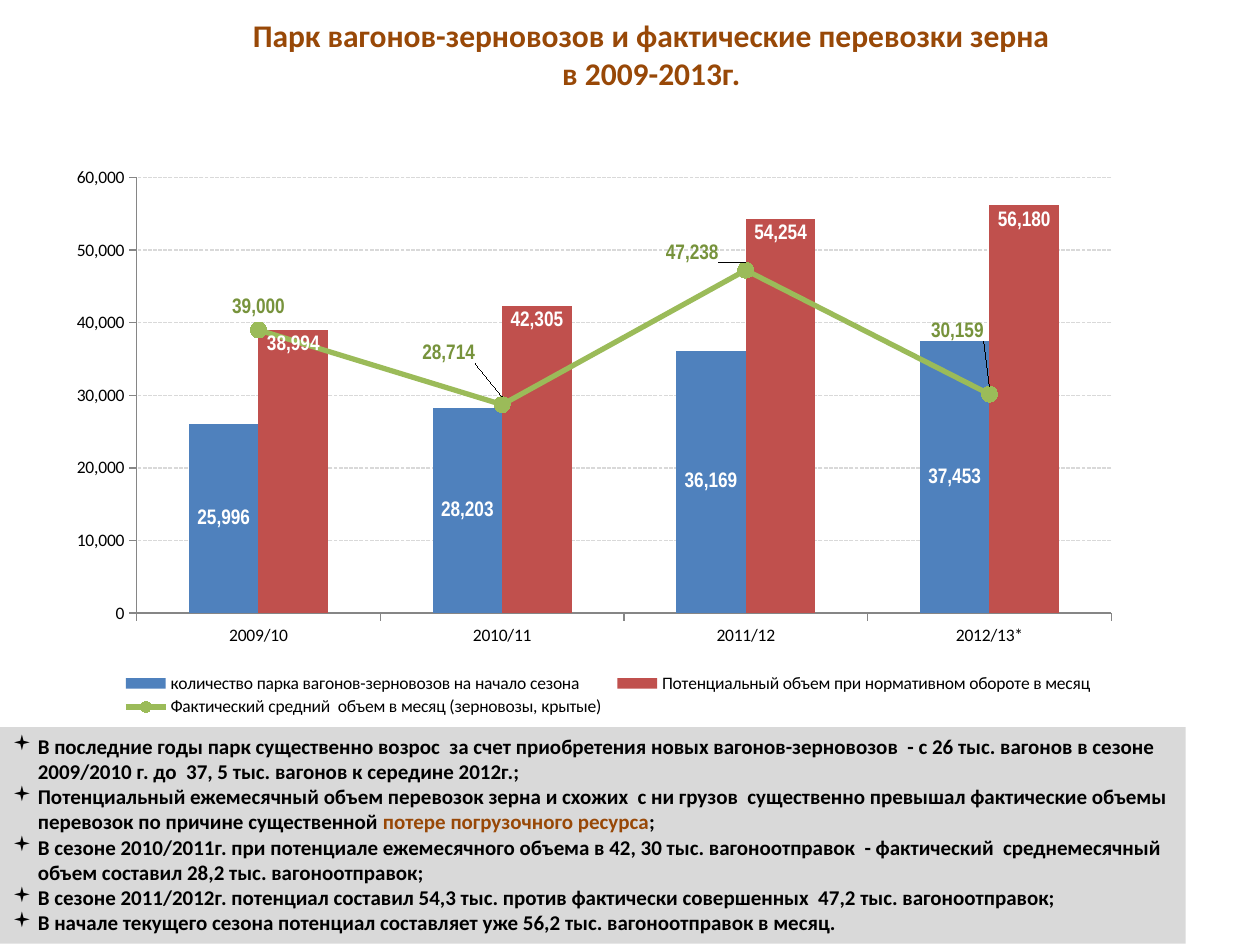
from lxml import etree
from pptx import Presentation
from pptx.chart.data import CategoryChartData
from pptx.dml.color import RGBColor
from pptx.enum.chart import XL_CHART_TYPE as ChartType
from pptx.enum.chart import XL_LABEL_POSITION as LabelPosition
from pptx.enum.chart import XL_LEGEND_POSITION as LegendPosition
from pptx.enum.chart import XL_MARKER_STYLE as MarkerStyle
from pptx.enum.chart import XL_TICK_MARK as TickMark
from pptx.enum.dml import MSO_LINE as LineDash
from pptx.enum.text import MSO_ANCHOR as Anchor
from pptx.enum.text import MSO_AUTO_SIZE as AutoSize
from pptx.enum.text import PP_ALIGN as Align
from pptx.oxml.ns import qn
from pptx.util import Inches, Pt

COLORS = {
    "brown": "984807", "black": "000000", "white": "FFFFFF", "panel": "D9D9D9",
    "grid": "D9D9D9", "axis": "868686", "fleet": "4F81BD",
    "potential": "C0504D", "actual": "9BBB59", "actual_label": "77933C",
}
FONT, LABEL_FONT = "Calibri", "Arial Narrow"
NUMBER_FORMAT = "#,##0"

TITLE = ["Парк вагонов-зерновозов и фактические перевозки зерна", "в 2009-2013г."]
# Each bullet is a list of (text, colour) runs
BULLETS = [
    [("В последние годы парк существенно возрос  за счет приобретения новых вагонов-зерновозов  "
      "- c 26 тыс. вагонов в сезоне 2009/2010 г. до  37, 5 тыс. вагонов к середине 2012г.;", "black")],
    [("Потенциальный ежемесячный объем перевозок зерна и схожих  с ни грузов  существенно "
      "превышал фактические объемы перевозок по причине существенной ", "black"),
     ("потере погрузочного ресурса", "brown"), (";", "black")],
    [("В сезоне 2010/2011г. при потенциале ежемесячного объема в 42, 30 тыс. вагоноотправок  "
      "- фактический  среднемесячный объем составил 28,2 тыс. вагоноотправок;", "black")],
    [("В сезоне 2011/2012г. потенциал составил 54,3 тыс. против фактически совершенных  "
      "47,2 тыс. вагоноотправок;", "black")],
    [("В начале текущего сезона потенциал составляет уже 56,2 тыс. вагоноотправок в месяц.", "black")],
]
SEASONS = ["2009/10", "2010/11", "2011/12", "2012/13*"]
# Name, values, series colour, label colour, label position
SERIES = [
    ("количество парка вагонов-зерновозов на начало сезона",
     [25996, 28203, 36169, 37453], "fleet", "white", LabelPosition.CENTER),
    ("Потенциальный объем при нормативном обороте в месяц",
     [38994, 42305, 54254, 56180], "potential", "white", LabelPosition.INSIDE_END),
    ("Фактический средний  объем в месяц (зерновозы, крытые)",
     [39000, 28714, 47238, 30159], "actual", "actual_label", LabelPosition.ABOVE),
]
# Shifts of the line labels, as fractions of the chart
LABEL_SHIFTS = {1: (-0.05, -0.05), 2: (-0.05, 0.01), 3: (-0.03, -0.07)}


def rgb(name):
    return RGBColor.from_string(COLORS[name])


def style_font(font, size, color, bold=False, name=FONT):
    font.size, font.bold, font.name = Pt(size), bold, name
    font.color.rgb = rgb(color)


def place(shape, box):
    shape.left, shape.top, shape.width, shape.height = (Inches(value) for value in box)


def prepare_text(shape):
    frame = shape.text_frame
    frame.word_wrap = True
    frame.auto_size = AutoSize.NONE
    frame.vertical_anchor = Anchor.TOP
    return frame


def add_paragraph(frame, index):
    paragraph = frame.add_paragraph() if index else frame.paragraphs[0]
    paragraph.space_before = Pt(0)
    return paragraph


def add_run(paragraph, text, size, color):
    run = paragraph.add_run()
    run.text = text
    style_font(run.font, size, color, bold=True)


def fill_title(shape, box):
    place(shape, box)
    frame = prepare_text(shape)
    for index, line in enumerate(TITLE):
        paragraph = add_paragraph(frame, index)
        paragraph.alignment = Align.CENTER
        add_run(paragraph, line, 18, "brown")


def fill_bullets(shape, box):
    place(shape, box)
    shape.fill.solid()
    shape.fill.fore_color.rgb = rgb("panel")
    frame = prepare_text(shape)
    for index, runs in enumerate(BULLETS):
        paragraph = add_paragraph(frame, index)
        properties = paragraph._p.get_or_add_pPr()
        properties.set("marL", str(Inches(0.2)))
        properties.set("indent", str(Inches(-0.2)))
        etree.SubElement(properties, qn("a:buFont"), typeface="Wingdings")
        etree.SubElement(properties, qn("a:buChar"), char="▪")
        for text, color in runs:
            add_run(paragraph, text, 12, color)


def make_layout(x, y, width=None, height=None, inner=False):
    """Manual layout: an absolute box, or a shift when no size is given."""
    layout = etree.Element(qn("c:layout"))
    manual = etree.SubElement(layout, qn("c:manualLayout"))
    values = []
    if inner:
        values.append(("layoutTarget", "inner"))
    if width:
        values += [("xMode", "edge"), ("yMode", "edge")]
    values += [("x", x), ("y", y)]
    if width:
        values += [("w", width), ("h", height)]
    for tag, value in values:
        etree.SubElement(manual, qn(f"c:{tag}"), val=str(value))
    return layout


def move_last_series_to_line(chart):
    bars = chart._chartSpace.find(f".//{qn('c:barChart')}")
    series = bars.findall(qn("c:ser"))[-1]
    for bar_setting in series.findall(qn("c:invertIfNegative")):
        series.remove(bar_setting)
    line = bars.makeelement(qn("c:lineChart"))
    bars.addnext(line)
    etree.SubElement(line, qn("c:grouping"), val="standard")
    etree.SubElement(line, qn("c:varyColors"), val="0")
    line.append(series)
    etree.SubElement(line, qn("c:marker"), val="1")
    for axis in bars.findall(qn("c:axId")):
        etree.SubElement(line, qn("c:axId"), val=axis.get("val"))


def style_series(chart):
    all_series = [series for plot in chart.plots for series in plot.series]
    for series, (_, _, color, label_color, position) in zip(all_series, SERIES):
        labels = series.data_labels
        labels.show_value = True
        labels.number_format, labels.number_format_is_linked = NUMBER_FORMAT, False
        labels.position = position
        style_font(labels.font, 12, label_color, bold=True, name=LABEL_FONT)
        if color != "actual":
            series.format.fill.solid()
            series.format.fill.fore_color.rgb = rgb(color)
            continue
        # Line with round markers
        series.smooth = False
        series.format.line.width = Pt(3)
        series.format.line.color.rgb = rgb(color)
        marker = series.marker
        marker.style, marker.size = MarkerStyle.CIRCLE, 9
        marker.format.fill.solid()
        marker.format.fill.fore_color.rgb = rgb(color)
        marker.format.line.color.rgb = rgb(color)
        for index, shift in LABEL_SHIFTS.items():
            label = series.points[index].data_label
            style_font(label.font, 12, label_color, bold=True, name=LABEL_FONT)
            label.position = position
            element = labels._element.findall(qn("c:dLbl"))[-1]
            element.find(qn("c:idx")).addnext(make_layout(*shift))


def add_combined_chart(slide, box):
    data = CategoryChartData(number_format=NUMBER_FORMAT)
    data.categories = SEASONS
    for name, values, *_ in SERIES:
        data.add_series(name, values)
    chart = slide.shapes.add_chart(
        ChartType.COLUMN_CLUSTERED, *(Inches(value) for value in box), data).chart
    chart.has_title = False
    style_font(chart.font, 10, "black")
    bars = chart.plots[0]
    bars.gap_width, bars.overlap, bars.vary_by_categories = 150, 0, False
    move_last_series_to_line(chart)
    style_series(chart)

    # Axes
    for axis in (chart.category_axis, chart.value_axis):
        axis.major_tick_mark = TickMark.OUTSIDE
        axis.minor_tick_mark = TickMark.NONE
        axis.format.line.color.rgb = rgb("axis")
    values = chart.value_axis
    values.minimum_scale, values.maximum_scale, values.major_unit = 0, 60000, 10000
    values.tick_labels.number_format = NUMBER_FORMAT
    values.tick_labels.number_format_is_linked = False
    grid = values.major_gridlines.format.line
    grid.color.rgb, grid.width, grid.dash_style = rgb("grid"), Pt(0.75), LineDash.SQUARE_DOT

    # Legend and plot area
    chart.has_legend = True
    legend = chart.legend
    legend.position, legend.include_in_layout = LegendPosition.BOTTOM, False
    legend._element.find(qn("c:legendPos")).addnext(make_layout(0.05, 0.91, 0.92, 0.09))
    plot_area = chart._chartSpace.find(f".//{qn('c:plotArea')}")
    for layout in plot_area.findall(qn("c:layout")):
        plot_area.remove(layout)
    plot_area.insert(0, make_layout(0.07, 0.04, 0.91, 0.77, inner=True))


def main():
    presentation = Presentation()
    presentation.slide_width, presentation.slide_height = Inches(10), Inches(7.5)
    slide = presentation.slides.add_slide(presentation.slide_layouts[1])
    fill_title(slide.shapes.title, (0.91, 0.08, 8.52, 0.71))
    fill_bullets(slide.placeholders[1], (0, 5.77, 9.41, 1.72))
    add_combined_chart(slide, (0.49, 1.23, 8.5, 4.49))
    presentation.save("out.pptx")


if __name__ == "__main__":
    main()
